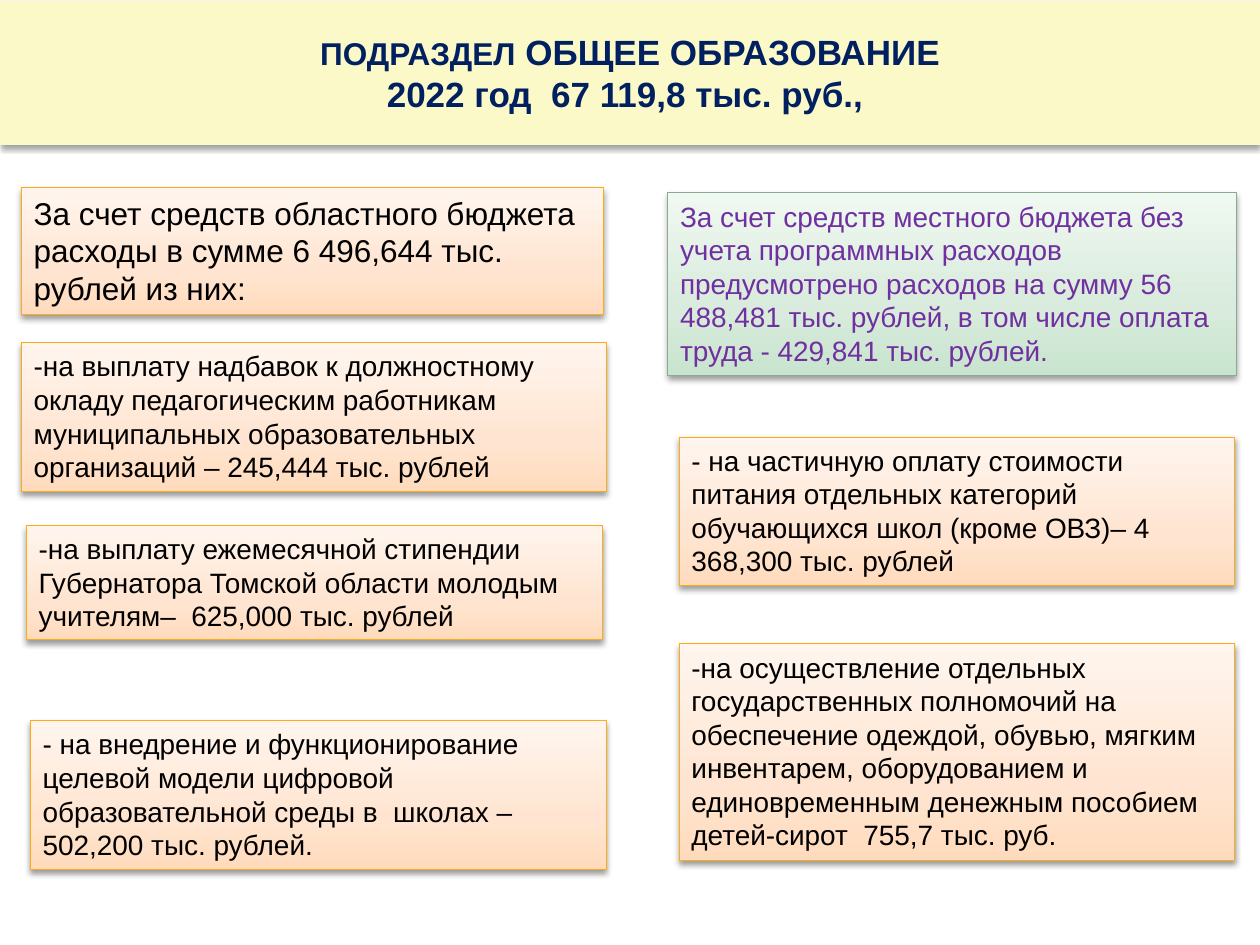
from copy import deepcopy
from dataclasses import dataclass

from lxml.etree import SubElement
from pptx import Presentation
from pptx.dml.color import RGBColor
from pptx.enum.shapes import MSO_SHAPE
from pptx.enum.text import MSO_ANCHOR, MSO_AUTO_SIZE, PP_ALIGN
from pptx.oxml.ns import qn
from pptx.util import Cm, Pt


@dataclass(frozen=True)
class Theme:
    font: str = "Arial"
    title_fill: str = "FCF9C8"
    title_text: str = "002060"
    text: str = "000000"
    accent_text: str = "7030A0"
    shadow: str = "000000"
    peach: tuple = ("FFDBBD", "FFE5D1", "FFF5EE")
    peach_line: str = "FFAB16"
    green: tuple = ("C8E4CE", "D8EBDC", "EFF8F1")
    green_line: str = "8CA993"
    stops: tuple = (0, 0.35, 1)
    title_size: int = 20
    lead_size: int = 18
    body_size: int = 16


THEME = Theme()

# Left, top, width, height in centimetres, text, and text size
PEACH_BOXES = [
    # Regional budget, left column
    (0.43, 3.78, 11.73, 2.57, "За счет средств областного бюджета  расходы в сумме "
     "6 496,644 тыс. рублей из них:", THEME.lead_size),
    (0.43, 6.91, 11.79, 3, "-на выплату надбавок к должностному окладу педагогическим "
     "работникам муниципальных образовательных организаций – 245,444 тыс. рублей",
     THEME.body_size),
    (0.53, 10.59, 11.61, 2.31, "-на выплату ежемесячной стипендии Губернатора Томской "
     "области молодым учителям–  625,000 тыс. рублей", THEME.body_size),
    (0.61, 14.53, 11.61, 3, "- на внедрение и функционирование целевой модели цифровой "
     "образовательной среды в  школах – 502,200 тыс. рублей.", THEME.body_size),
    # Regional budget, right column
    (13.69, 8.81, 11.2, 3, "- на частичную оплату стоимости питания отдельных категорий "
     "обучающихся школ (кроме ОВЗ)– 4 368,300 тыс. рублей", THEME.body_size),
    (13.69, 12.98, 11.2, 4.37, "-на осуществление отдельных государственных полномочий "
     "на обеспечение одеждой, обувью, мягким инвентарем, оборудованием и единовременным "
     "денежным пособием детей-сирот  755,7 тыс. руб.", THEME.body_size),
]
LOCAL_BOX = (13.46, 3.89, 11.46, 3.68, "За счет средств местного бюджета без учета "
             "программных расходов предусмотрено расходов на сумму 56 488,481 тыс. "
             "рублей, в том числе оплата труда - 429,841 тыс. рублей.", THEME.body_size)


def rgb(value):
    return RGBColor.from_string(value)


def add_text(para, text, size=THEME.body_size, color=THEME.text, bold=False):
    span = para.add_run()
    span.text = text
    span.font.name = THEME.font
    span.font.size = Pt(size)
    span.font.bold = bold
    span.font.color.rgb = rgb(color)


def add_shadow(shape, blur):
    """Give the shape a soft shadow that falls straight down."""
    shape.shadow.inherit = False
    effects = shape._element.spPr.find(qn("a:effectLst"))
    outer = SubElement(effects, qn("a:outerShdw"), blurRad=str(Pt(blur)),
                       dist=str(Pt(2)), dir="5400000", rotWithShape="0")
    color = SubElement(outer, qn("a:srgbClr"), val=THEME.shadow)
    SubElement(color, qn("a:alpha"), val="38000")


def fill_gradient(shape, colors):
    """Fill from the first colour at the bottom to the last at the top."""
    shape.fill.gradient()
    shape.fill.gradient_angle = 90
    stop_list = shape._element.spPr.find(qn("a:gradFill")).find(qn("a:gsLst"))
    stop_list.append(deepcopy(stop_list[-1]))
    for stop, color, position in zip(shape.fill.gradient_stops, colors, THEME.stops):
        stop.color.rgb = rgb(color)
        stop.position = position


def add_title(page):
    title = page.shapes.title
    title.left, title.top, title.width, title.height = Cm(0), Cm(0.02), Cm(25.4), Cm(2.9)
    title.fill.solid()
    title.fill.fore_color.rgb = rgb(THEME.title_fill)
    add_shadow(title, blur=3.1)
    frame = title.text_frame
    frame.auto_size = MSO_AUTO_SIZE.NONE
    frame.vertical_anchor = MSO_ANCHOR.MIDDLE
    para = frame.paragraphs[0]
    para.alignment = PP_ALIGN.CENTER
    style = dict(color=THEME.title_text, bold=True)
    add_text(para, "ПОДРАЗДЕЛ", size=THEME.lead_size, **style)
    add_text(para, " ОБЩЕЕ ОБРАЗОВАНИЕ", size=THEME.title_size, **style)
    para.add_line_break()
    add_text(para, "2022 год  67 119,8 тыс. руб., ", size=THEME.title_size, **style)


def add_box(page, left, top, width, height, text, size, colors, line, text_color):
    box = page.shapes.add_shape(MSO_SHAPE.RECTANGLE, Cm(left), Cm(top), Cm(width), Cm(height))
    fill_gradient(box, colors)
    box.line.color.rgb = rgb(line)
    box.line.width = Pt(0.5)
    add_shadow(box, blur=3.5)
    frame = box.text_frame
    frame.word_wrap = True
    frame.auto_size = MSO_AUTO_SIZE.SHAPE_TO_FIT_TEXT
    frame.vertical_anchor = MSO_ANCHOR.TOP
    para = frame.paragraphs[0]
    para.alignment = PP_ALIGN.LEFT
    add_text(para, text, size=size, color=text_color)


def main():
    deck = Presentation()
    deck.slide_width, deck.slide_height = Cm(25.4), Cm(19.05)
    page = deck.slides.add_slide(deck.slide_layouts[5])

    # Heading band
    add_title(page)

    # Local budget
    add_box(page, *LOCAL_BOX, colors=THEME.green, line=THEME.green_line,
            text_color=THEME.accent_text)

    # Regional budget and its items
    for content in PEACH_BOXES:
        add_box(page, *content, colors=THEME.peach, line=THEME.peach_line,
                text_color=THEME.text)

    deck.save("out.pptx")


if __name__ == "__main__":
    main()
